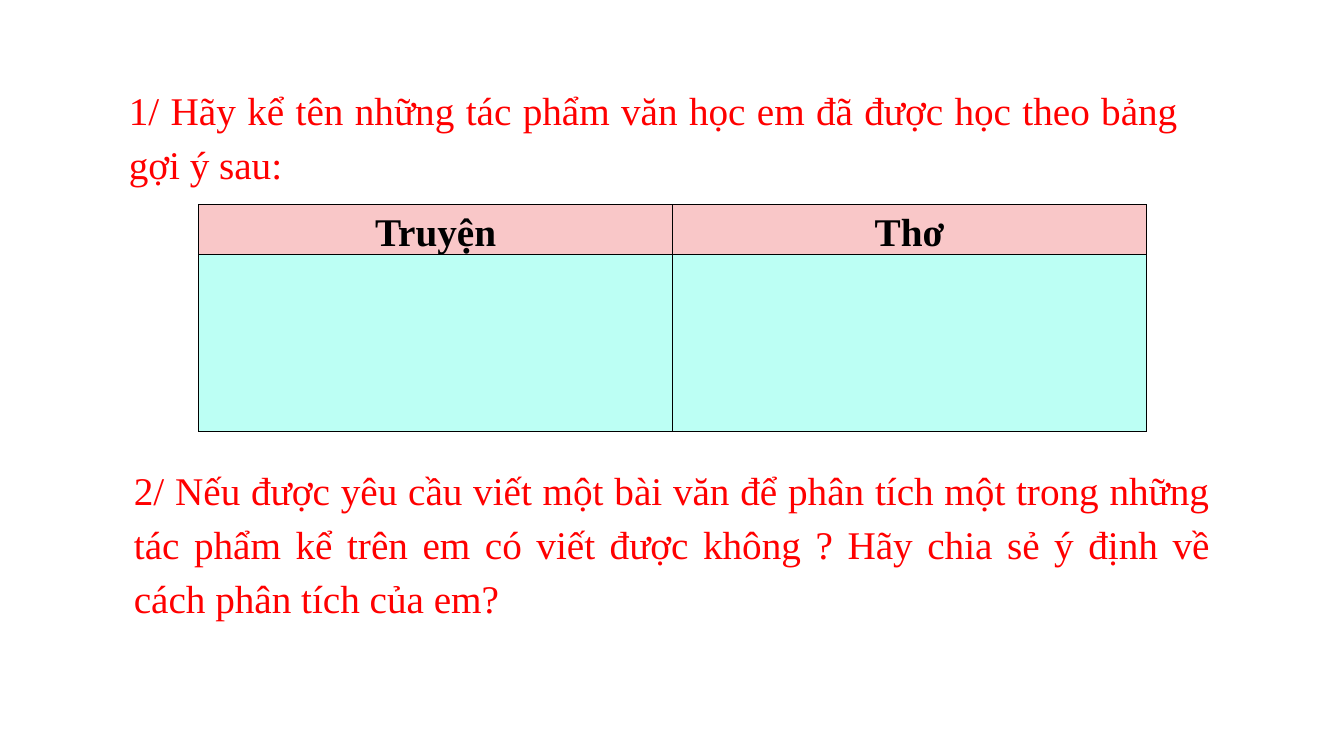
from lxml.etree import SubElement
from pptx import Presentation
from pptx.dml.color import RGBColor
from pptx.enum.text import MSO_AUTO_SIZE, PP_ALIGN
from pptx.oxml.ns import qn
from pptx.util import Inches, Pt

COLORS = {"question": "FF0000", "header": "000000", "border": "000000",
          "header_fill": "F9C7C8", "answer_fill": "BCFFF4"}
QUESTIONS = [
    ("1/ Hãy kể tên những tác phẩm văn học em đã được học theo bảng gợi ý sau:",
     (1.18, 0.74, 10.6, 1.14)),
    ("2/ Nếu được yêu cầu viết một bài văn để phân tích một trong những tác phẩm "
     "kể trên em có viết được không ? Hãy chia sẻ ý định về cách phân tích của em?",
     (1.23, 4.51, 10.87, 1.68)),
]
GENRES = ["Truyện", "Thơ"]
TABLE_LEFT, TABLE_TOP, TABLE_WIDTH = 1.97, 2.03, 9.4
ROW_HEIGHTS = [0.49, 1.76]
PARAGRAPH_FORMAT = {"line_spacing": 1.15, "space_after": Pt(10)}
FONT_FORMAT = {"name": "Times New Roman", "size": Pt(28)}
CELL_MARGINS = {"margin_left": Inches(0.07), "margin_right": Inches(0.07),
                "margin_top": 0, "margin_bottom": 0}


def apply_format(target, values):
    for name, value in values.items():
        setattr(target, name, value)


def write(frame, text, color, alignment, bold=False):
    paragraph = frame.paragraphs[0]
    apply_format(paragraph, {**PARAGRAPH_FORMAT, "alignment": alignment})
    run = paragraph.add_run()
    run.text = text
    apply_format(run.font, {**FONT_FORMAT, "bold": bold})
    run.font.color.rgb = RGBColor.from_string(COLORS[color])


def style_cell(cell, fill):
    """Set the margins, the four borders and the fill of a cell."""
    apply_format(cell, CELL_MARGINS)
    properties = cell._tc.get_or_add_tcPr()
    for side in ("lnL", "lnR", "lnT", "lnB"):
        border = SubElement(properties, qn(f"a:{side}"), w=str(Pt(1)))
        solid = SubElement(border, qn("a:solidFill"))
        SubElement(solid, qn("a:srgbClr"), val=COLORS["border"])
    cell.fill.solid()
    cell.fill.fore_color.rgb = RGBColor.from_string(COLORS[fill])


def add_genre_table(slide):
    box = (TABLE_LEFT, TABLE_TOP, TABLE_WIDTH, sum(ROW_HEIGHTS))
    table = slide.shapes.add_table(len(ROW_HEIGHTS), len(GENRES),
                                   *map(Inches, box)).table
    for row, height in zip(table.rows, ROW_HEIGHTS):
        row.height = Inches(height)
    for column, genre in enumerate(GENRES):
        table.columns[column].width = Inches(TABLE_WIDTH / len(GENRES))
        header, answer = table.cell(0, column), table.cell(1, column)
        style_cell(header, "header_fill")
        style_cell(answer, "answer_fill")
        write(header.text_frame, genre, "header", PP_ALIGN.CENTER, bold=True)


def add_question(slide, text, box):
    frame = slide.shapes.add_textbox(*map(Inches, box)).text_frame
    apply_format(frame, {"word_wrap": True,
                         "auto_size": MSO_AUTO_SIZE.SHAPE_TO_FIT_TEXT})
    write(frame, text, "question", PP_ALIGN.JUSTIFY)


def main():
    presentation = Presentation()
    presentation.slide_width = Inches(13.33)
    presentation.slide_height = Inches(7.5)
    slide = presentation.slides.add_slide(presentation.slide_layouts[6])
    add_genre_table(slide)
    for text, box in QUESTIONS:
        add_question(slide, text, box)
    presentation.save("out.pptx")


if __name__ == "__main__":
    main()
